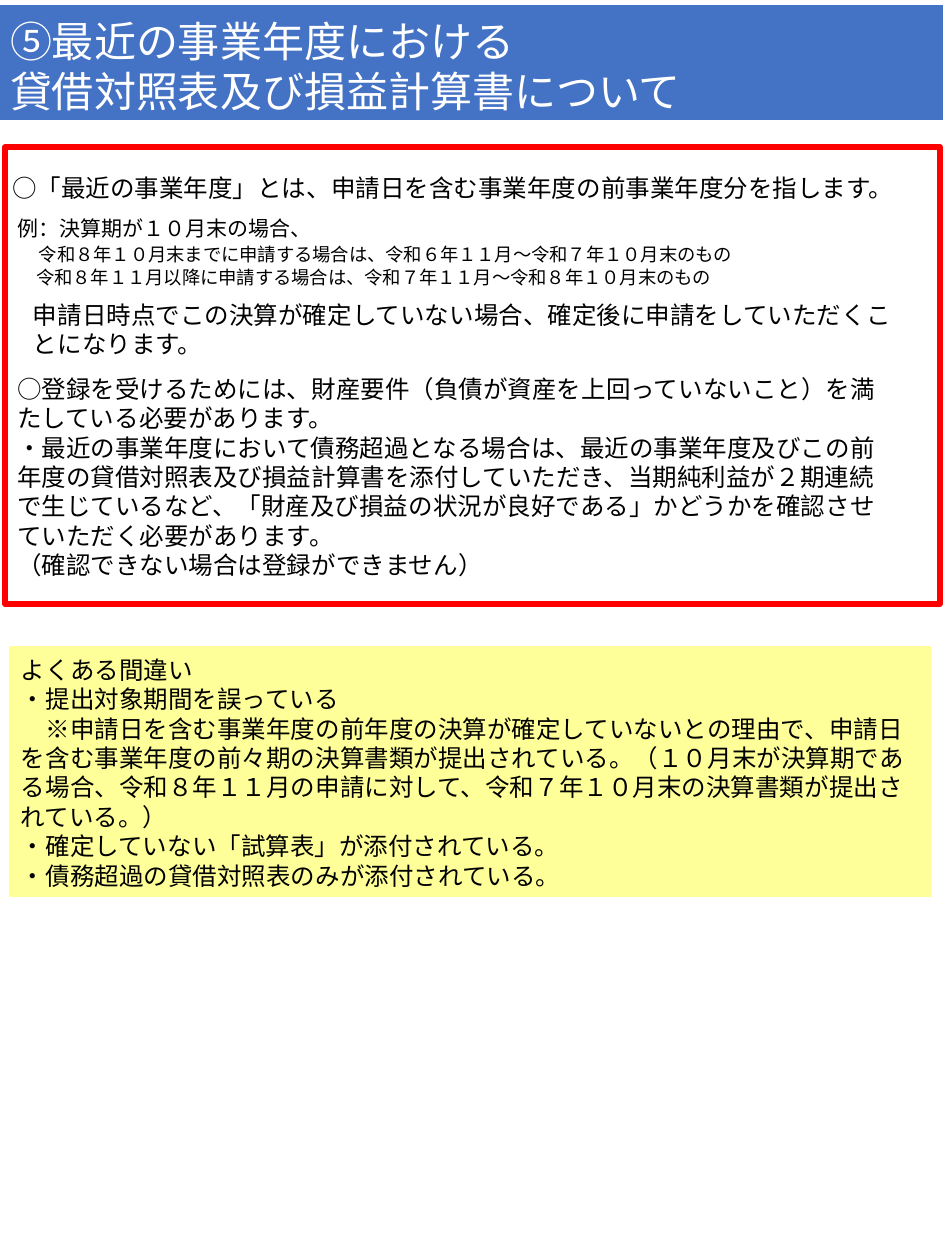
"""Builds the guidance slide on balance sheets and income statements."""
import lxml.etree
import pptx
import pptx.dml.color
import pptx.enum.shapes
import pptx.enum.text
import pptx.oxml.ns
import pptx.util

COLORS = {"banner": "4472C4", "mistakes": "FFFF99", "frame": "FF0000",
          "ink": "000000", "light": "FFFFFF"}


class SlideBuilder:
    scale = 914400 / 126
    font = "Noto Sans CJK JP"
    leading = 1.2
    margin = 12
    paragraph_format = {"alignment": pptx.enum.text.PP_ALIGN.LEFT,
                        "space_before": pptx.util.Pt(0),
                        "space_after": pptx.util.Pt(0)}
    frame_format = {"word_wrap": True,
                    "auto_size": pptx.enum.text.MSO_AUTO_SIZE.NONE,
                    "vertical_anchor": pptx.enum.text.MSO_ANCHOR.TOP}

    def __init__(self, slide):
        self.slide = slide

    def px(self, length):
        return pptx.util.Emu(round(length * self.scale))

    def apply(self, target, values):
        for name, value in values.items():
            setattr(target, name, value)

    def color(self, name):
        return pptx.dml.color.RGBColor.from_string(COLORS[name])

    def fill_text(self, shape, paragraphs, ink="ink"):
        frame = shape.text_frame
        first_size = paragraphs[0][0][1]
        self.apply(frame, {**self.frame_format,
                           "margin_left": self.px(self.margin),
                           "margin_right": self.px(self.margin),
                           "margin_top": pptx.util.Pt(3.6 + first_size * 0.1),
                           "margin_bottom": 0})
        for index, runs in enumerate(paragraphs):
            paragraph = frame.paragraphs[0] if index == 0 else frame.add_paragraph()
            tallest = max(size for _, size in runs)
            self.apply(paragraph, {**self.paragraph_format,
                                   "line_spacing": pptx.util.Pt(tallest * self.leading)})
            for text, size in runs:
                run = paragraph.add_run()
                run.text = text
                self.apply(run.font, {"size": pptx.util.Pt(size), "name": self.font,
                                      "bold": False})
                run.font.color.rgb = self.color(ink)
                lxml.etree.SubElement(run._r.get_or_add_rPr(), pptx.oxml.ns.qn("a:ea"),
                                      typeface=self.font)

    def placeholder(self, shape, box, fill, paragraphs, ink="ink"):
        self.apply(shape, dict(zip(("left", "top", "width", "height"), map(self.px, box))))
        shape.fill.solid()
        shape.fill.fore_color.rgb = self.color(fill)
        self.fill_text(shape, paragraphs, ink)

    def plain_list(self, shape, box, fill, paragraphs):
        self.placeholder(shape, box, fill, paragraphs)
        for paragraph in shape.text_frame.paragraphs:
            properties = paragraph._p.get_or_add_pPr()
            properties.set("marL", "0")
            properties.set("indent", "0")
            lxml.etree.SubElement(properties, pptx.oxml.ns.qn("a:buNone"))

    def note(self, box, paragraphs):
        self.fill_text(self.slide.shapes.add_textbox(*map(self.px, box)), paragraphs)

    def outline(self, box, line, width):
        frame = self.slide.shapes.add_shape(
            pptx.enum.shapes.MSO_SHAPE.RECTANGLE, *map(self.px, box))
        frame.shadow.inherit = False
        frame.fill.background()
        frame.line.color.rgb = self.color(line)
        frame.line.width = pptx.util.Pt(width)


def lines(size, *texts):
    return [[(text, size)] for text in texts]


def main():
    deck = pptx.Presentation()
    deck.slide_width = pptx.util.Inches(7.5)
    deck.slide_height = pptx.util.Inches(10)
    slide = deck.slides.add_slide(deck.slide_layouts[1])
    builder = SlideBuilder(slide)
    title, mistakes = slide.placeholders

    builder.placeholder(title, (-2, 5, 945, 115), "banner", lines(
        24, "⑤最近の事業年度における", "貸借対照表及び損益計算書について"), "light")
    builder.plain_list(mistakes, (9, 646, 922, 251), "mistakes", lines(
        14,
        "よくある間違い",
        "・提出対象期間を誤っている",
        "　※申請日を含む事業年度の前年度の決算が確定していないとの理由で、申請日を含む事業年度の"
        "前々期の決算書類が提出されている。（１０月末が決算期である場合、令和８年１１月の申請に対して、"
        "令和７年１０月末の決算書類が提出されている。）",
        "・確定していない「試算表」が添付されている。",
        "・債務超過の貸借対照表のみが添付されている。"))

    builder.note((0, 164, 941, 43), lines(
        14, "○「最近の事業年度」とは、申請日を含む事業年度の前事業年度分を指します。"))
    builder.outline((5, 147, 935, 457), "frame", 3)
    builder.note((6, 207, 767, 86), [
        [("例：決算期が１０月末の場合、", 12)],
        [("　", 12),
         ("令和８年１０月末までに申請する場合は、令和６年１１月～令和７年１０月末のもの", 10.5)],
        [("　令和８年１１月以降に申請する場合は、令和７年１１月～令和８年１０月末のもの", 10.5)]])
    builder.note((21, 291, 888, 72), lines(
        14, "申請日時点でこの決算が確定していない場合、確定後に申請をしていただくことになります。"))
    builder.note((5, 365, 903, 221), lines(
        14,
        "○登録を受けるためには、財産要件（負債が資産を上回っていないこと）を満たしている必要があります。",
        "・最近の事業年度において債務超過となる場合は、最近の事業年度及びこの前年度の貸借対照表及び"
        "損益計算書を添付していただき、当期純利益が２期連続で生じているなど、「財産及び損益の状況が"
        "良好である」かどうかを確認させていただく必要があります。",
        "（確認できない場合は登録ができません）"))
    deck.save("out.pptx")


if __name__ == "__main__":
    main()
